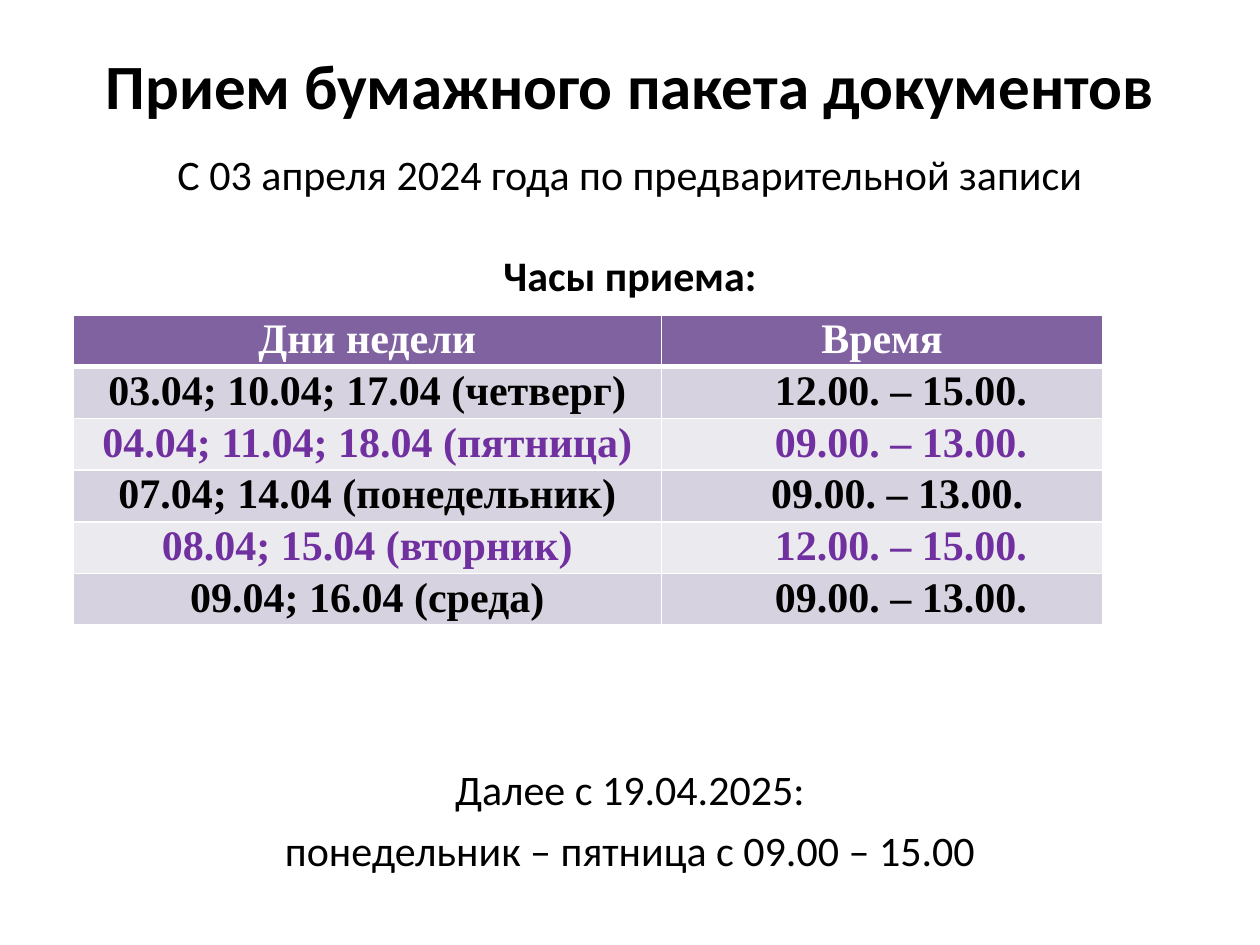
from typing import NamedTuple

from lxml import etree
from pptx import Presentation
from pptx.dml.color import RGBColor
from pptx.enum.text import PP_ALIGN
from pptx.oxml.ns import qn
from pptx.util import Inches, Pt

LEFT, CENTER = PP_ALIGN.LEFT, PP_ALIGN.CENTER
WIDE, HIGH = 10, 7.5
WHITE, BLACK, PURPLE = "FFFFFF", "000000", "7030A0"
HEAD, DARK, LIGHT = "8062A0", "D6D2DF", "EBEAEE"
SANS, SERIF = "Calibri", "Times New Roman"
COLS = (4.67, 3.5)
ROW = 0.41


class Line(NamedTuple):
    text: str
    size: int = 24
    bold: bool = False
    before: float = 0


class Block(NamedTuple):
    """A text box centred across the slide."""
    top: float
    width: float
    height: float
    lines: tuple
    inset: float = 0.01


class Slot(NamedTuple):
    days: str
    hours: str
    indent: float = 0.9


BLOCKS = (
    Block(0.36, 8.4, 0.63,
          (Line("Прием бумажного пакета документов", 36, True),)),
    Block(1.17, 7.26, 1.23,
          (Line("С 03 апреля 2024 года по предварительной записи"),
           Line("Часы приема:", bold=True, before=29.1))),
    Block(5.96, 5.6, 0.99,
          (Line("Далее с 19.04.2025:"),
           Line("понедельник – пятница с 09.00 – 15.00", before=6)), 0.1),
)
SLOTS = (
    Slot("03.04; 10.04; 17.04 (четверг)", "12.00. – 15.00."),
    Slot("04.04; 11.04; 18.04 (пятница)", "09.00. – 13.00."),
    Slot("07.04; 14.04 (понедельник)", "09.00. – 13.00.", 0.87),
    Slot("08.04; 15.04 (вторник)", "12.00. – 15.00."),
    Slot("09.04; 16.04 (среда)", "09.00. – 13.00."),
)


def paint(target, color: str) -> None:
    target.rgb = RGBColor.from_string(color)


def style(para, face: str, size: int, bold: bool, color: str) -> None:
    for run in para.runs:
        run.font.name, run.font.size, run.font.bold = face, Pt(size), bold
        paint(run.font.color, color)


def pad(frame, left: float, top: float) -> None:
    frame.margin_left, frame.margin_top = Inches(left), Inches(top)
    frame.margin_right = frame.margin_bottom = 0


def add_block(slide, block: Block) -> None:
    left = (WIDE - block.width) / 2
    box = slide.shapes.add_textbox(Inches(left), Inches(block.top),
                                   Inches(block.width), Inches(block.height))
    frame = box.text_frame
    frame.word_wrap = True
    pad(frame, 0, block.inset)
    frame.text = "\n".join(line.text for line in block.lines)
    for para, line in zip(frame.paragraphs, block.lines):
        para.alignment = CENTER
        if line.before:
            para.space_before = Pt(line.before)
        style(para, SANS, line.size, line.bold, BLACK)


def edge(cell, top: int, bottom: int) -> None:
    """Give the cell white borders, with top and bottom widths in points."""
    props = cell._tc.get_or_add_tcPr()
    for tag, width in (("lnL", 1), ("lnR", 1), ("lnT", top), ("lnB", bottom)):
        line = etree.SubElement(props, qn(f"a:{tag}"), w=str(Pt(width)))
        fill = etree.SubElement(line, qn("a:solidFill"))
        etree.SubElement(fill, qn("a:srgbClr"), val=WHITE)


def fill_cell(cell, text: str, row: int, indent: float) -> None:
    cell.text = text
    pad(cell, indent, 0.01)
    edge(cell, 3 if row == 1 else 1, 3 if row == 0 else 1)
    if row == 0:
        back, ink = HEAD, WHITE
    else:
        back, ink = (DARK, BLACK) if row % 2 else (LIGHT, PURPLE)
    cell.fill.solid()
    paint(cell.fill.fore_color, back)
    para = cell.text_frame.paragraphs[0]
    para.alignment = LEFT if indent else CENTER
    style(para, SERIF, 24, True, ink)


def add_hours(slide) -> None:
    rows = (Slot("Дни недели", "Время", 0), *SLOTS)
    table = slide.shapes.add_table(
        len(rows), len(COLS), Inches(0.58), Inches(2.5),
        Inches(sum(COLS)), Inches(ROW * len(rows))).table
    for col, width in zip(table.columns, COLS):
        col.width = Inches(width)
    for i, slot in enumerate(rows):
        table.rows[i].height = Inches(ROW)
        fill_cell(table.cell(i, 0), slot.days, i, 0)
        fill_cell(table.cell(i, 1), slot.hours, i, slot.indent)


def main() -> None:
    deck = Presentation()
    deck.slide_width, deck.slide_height = Inches(WIDE), Inches(HIGH)
    slide = deck.slides.add_slide(deck.slide_layouts[6])
    for block in BLOCKS:
        add_block(slide, block)
    add_hours(slide)
    deck.save("out.pptx")


if __name__ == "__main__":
    main()
